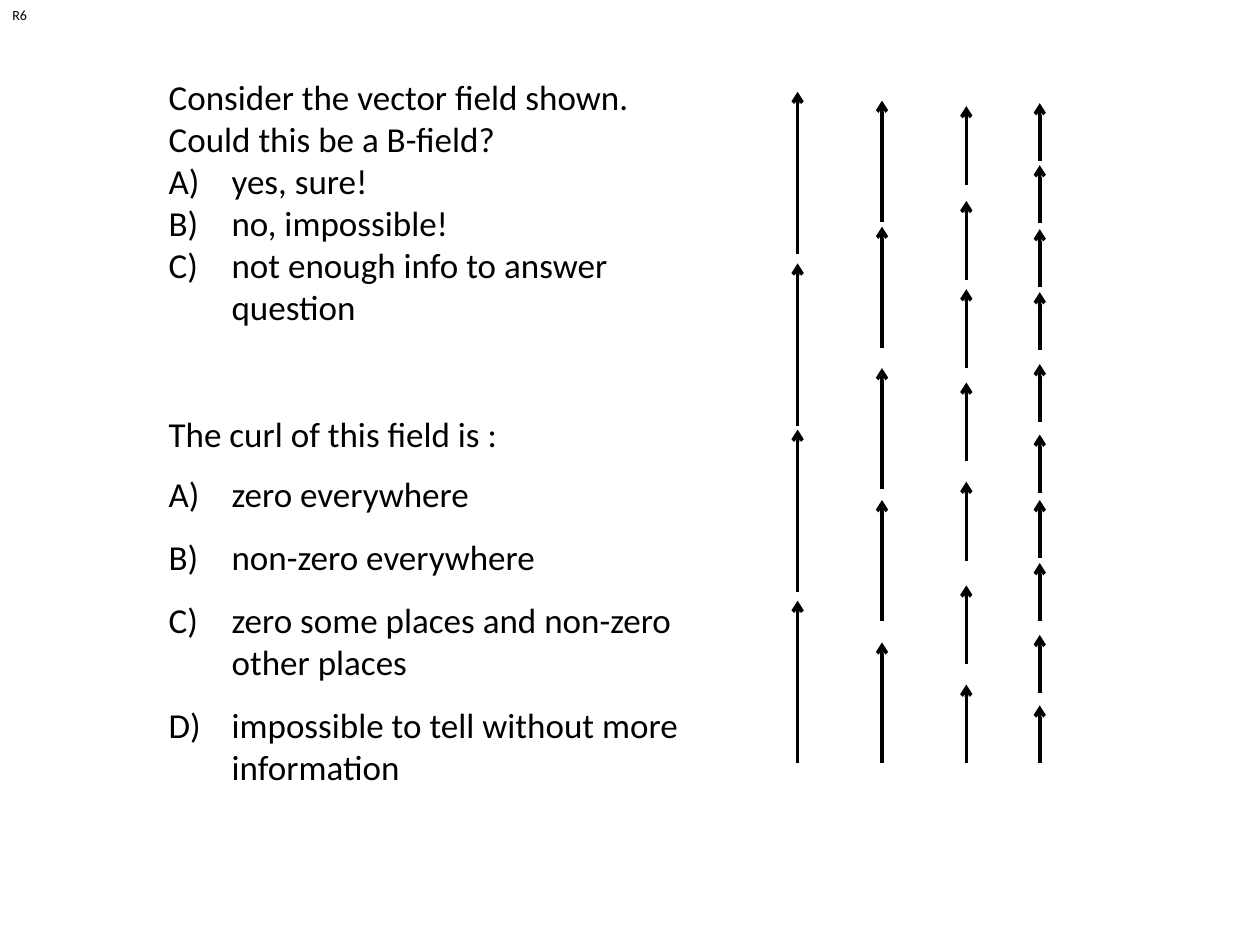
from dataclasses import dataclass

from lxml import etree
from pptx import Presentation
from pptx import util as u
from pptx.dml.color import RGBColor
from pptx.enum import shapes
from pptx.oxml import ns


@dataclass(frozen=True)
class Theme:
    font: str = "Calibri"
    ink: RGBColor = RGBColor(0, 0, 0)
    body: u.Pt = u.Pt(20)
    label: u.Pt = u.Pt(8)
    line: u.Pt = u.Pt(2)


theme = Theme()
presentation = Presentation()
presentation.slide_width = u.Cm(25.4)
presentation.slide_height = u.Cm(19.05)
slide = presentation.slides.add_slide(presentation.slide_layouts[6])


def add_text(box, prompts, answers=(), size=theme.body, gap=0, wrap=True):
    frame = slide.shapes.add_textbox(*map(u.Cm, box)).text_frame
    frame.word_wrap = wrap
    frame.text = "\n".join([*prompts, *answers])
    for index, paragraph in enumerate(frame.paragraphs):
        paragraph.font.name = theme.font
        paragraph.font.size = size
        paragraph.font.color.rgb = theme.ink
        if index >= len(prompts):
            paragraph.space_before = u.Pt(gap)
            properties = paragraph._p.get_or_add_pPr()
            properties.set("marL", str(u.Cm(1.27)))
            properties.set("indent", str(u.Cm(-1.27)))
            bullet = etree.Element(ns.qn("a:buAutoNum"), type="alphaUcParenR")
            properties.find(ns.qn("a:defRPr")).addprevious(bullet)


add_text(
    (3.15, 1.4, 10.85, 6.25),
    ["Consider the vector field shown.", "Could this be a B-field?"],
    ["yes, sure!", "no, impossible!", "not enough info to answer question"],
)
add_text((3.15, 8.2, 11, 1.11), ["The curl of this field is :"])
add_text(
    (3.15, 9.4, 11, 6.68),
    [],
    [
        "zero everywhere",
        "non-zero everywhere",
        "zero some places and non-zero other places",
        "impossible to tell without more information",
    ],
    gap=12,
)

field_columns = [
    (16.08, 3.28, [15.39, 11.94, 8.59, 5.13]),
    (17.78, 2.44, [15.39, 12.52, 9.86, 7.01, 4.47]),
    (19.48, 1.59, [15.39, 13.39, 11.3, 9.3, 7.42, 5.64, 3.73]),
    (20.96, 1.17, [15.39, 13.97, 12.52, 11.25, 9.93, 8.51, 7.06, 5.79, 4.5, 3.25]),
]
field = slide.shapes.add_group_shape()
for x, length, bases in field_columns:
    for base in bases:
        arrow = field.shapes.add_connector(
            shapes.MSO_CONNECTOR.STRAIGHT, u.Cm(x), u.Cm(base), u.Cm(x), u.Cm(base - length)
        )
        arrow.line.color.rgb = theme.ink
        arrow.line.width = theme.line
        etree.SubElement(arrow.line._get_or_add_ln(), ns.qn("a:tailEnd"), type="arrow")
        etree.SubElement(arrow._element.spPr, ns.qn("a:effectLst"))

add_text((0, 0, 0.81, 0.6), ["R6"], size=theme.label, wrap=False)

presentation.save("out.pptx")
